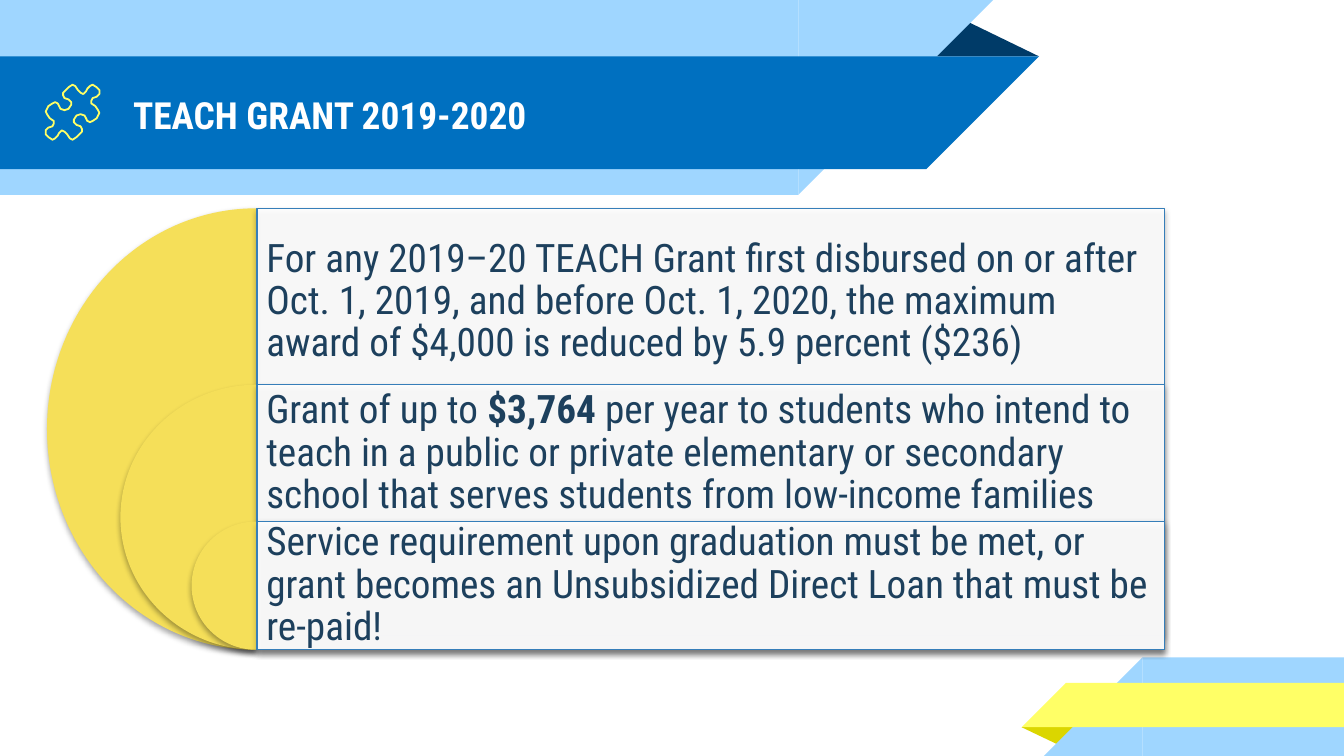
"""Build the TEACH Grant slide with ribbon bands and nested half circles."""
import lxml.etree
import pptx
import pptx.dml.color
import pptx.enum.shapes
import pptx.enum.text
import pptx.oxml.ns
import pptx.util

Pt = pptx.util.Pt
MSO = pptx.enum.shapes.MSO_SHAPE
ANCHOR = pptx.enum.text.MSO_ANCHOR
qn = pptx.oxml.ns.qn
FONT = "Roboto Condensed"
COLORS = {
    "navy": "003B68", "sky": "9FD6FF", "blue": "0070C0", "olive": "DBD600",
    "lemon": "FFFF66", "gold": "F5DF59", "white": "FFFFFF", "border": "367EB9",
    "text": "1D405D", "shadow": "000000",
}


def rgb(name):
    return pptx.dml.color.RGBColor.from_string(COLORS[name])


def add_filled(kind, box, color, shadow=False):
    sp = s.shapes.add_shape(kind, *[Pt(v) for v in box])
    sp.fill.solid()
    sp.fill.fore_color.rgb = rgb(color)
    sp.line.fill.background()
    sp.shadow.inherit = False
    if shadow:
        effects = sp._element.spPr.find(qn("a:effectLst"))
        outer = lxml.etree.SubElement(
            effects, qn("a:outerShdw"), blurRad=str(Pt(3.1)), dist=str(Pt(1.8)),
            dir="5400000", rotWithShape="0")
        clr = lxml.etree.SubElement(outer, qn("a:srgbClr"), val=COLORS["shadow"])
        lxml.etree.SubElement(clr, qn("a:alpha"), val="35000")
    return sp


prs = pptx.Presentation()
prs.slide_width, prs.slide_height = Pt(720), Pt(405)
s = prs.slides.add_slide(prs.slide_layouts[5])

bands = [
    (MSO.ISOSCELES_TRIANGLE, (495.4, 10.1, 61.2, 20.1), "navy", 0),
    (MSO.RECTANGLE, (0, 0, 427.7, 104.4), "sky", 0),
    (MSO.RIGHT_TRIANGLE, (427.7, 0, 104.4, 104.4), "sky", 90),
    (MSO.RECTANGLE, (0, 30.2, 496.1, 60.5), "blue", 0),
    (MSO.RIGHT_TRIANGLE, (496.1, 30.2, 60.5, 60.5), "blue", 90),
    (MSO.ISOSCELES_TRIANGLE, (547.3, 389.6, 31, 10), "olive", 180),
    (MSO.RECTANGLE, (612, 352.2, 108, 52.8), "sky", 0),
    (MSO.RIGHT_TRIANGLE, (559.2, 352.2, 52.8, 52.8), "sky", 270),
    (MSO.RECTANGLE, (571, 365.9, 149, 23.7), "lemon", 0),
    (MSO.RIGHT_TRIANGLE, (547.3, 365.9, 23.7, 23.7), "lemon", 270),
]
for kind, box, color, angle in bands:
    sp = add_filled(kind, box, color)
    sp.rotation = angle
    if kind == MSO.ISOSCELES_TRIANGLE:
        sp.adjustments[0] = 0.324

left, width, bottom = 137.7, 486, 348.1
rows = [
    (111.6, 224, 127.4, 68.4, [
        "For any 2019–20 TEACH Grant first disbursed on or after Oct. 1, 2019, "
        "and before Oct. 1, 2020, the maximum award of $4,000 is reduced by "
        "5.9 percent ($236)"]),
    (206.1, 145.4, 210.2, 65.5, [
        "Grant of up to ", "$3,764 ",
        "per year to students who intend to teach in a public or private "
        "elementary or secondary school that serves students from "
        "low-income families"]),
    (279.4, 69.2, 279.4, 68.4, [
        "Service requirement upon graduation must be met, or grant becomes an "
        "Unsubsidized Direct Loan that must be re-paid!"]),
]
for top, pie_width, text_top, text_height, texts in rows:
    height = bottom - top
    pie_height = 236.5 if top == rows[0][0] else height
    sp = add_filled(MSO.PIE, (left - 1.5 - pie_width / 2 + 1, top, pie_width, pie_height),
                    "gold", True)
    sp.adjustments[0], sp.adjustments[1] = 54, 162

    panel_height = 229 if top == rows[0][0] else height
    sp = add_filled(MSO.RECTANGLE, (left, top, width, panel_height), "white", True)
    clr = sp._element.spPr.find(qn("a:solidFill")).find(qn("a:srgbClr"))
    lxml.etree.SubElement(clr, qn("a:alpha"), val="90000")
    sp.line.color.rgb = rgb("border")
    sp.line.width = Pt(0.75)

    tf = s.shapes.add_textbox(Pt(left), Pt(text_top), Pt(width), Pt(text_height)).text_frame
    tf.word_wrap = True
    tf.vertical_anchor = ANCHOR.MIDDLE
    tf.margin_left = tf.margin_right = tf.margin_top = tf.margin_bottom = Pt(5)
    p = tf.paragraphs[0]
    p.line_spacing = 0.9
    for i, text in enumerate(texts):
        r = p.add_run()
        r.text = text
        r.font.name, r.font.size, r.font.bold = FONT, Pt(21), i == 1
        r.font.color.rgb = rgb("text")

title = s.shapes.title
title.left, title.top, title.width, title.height = Pt(64.1), Pt(31), Pt(443.5), Pt(60.5)
s.shapes._spTree.append(title._element)
tf = title.text_frame
tf.text = "TEACH GRANT 2019-2020"
tf.vertical_anchor = ANCHOR.MIDDLE
tf.margin_left = tf.margin_right = tf.margin_top = tf.margin_bottom = Pt(7.2)
p = tf.paragraphs[0]
p.alignment = pptx.enum.text.PP_ALIGN.LEFT
r = p.runs[0]
r.font.name, r.font.size, r.font.bold = FONT, Pt(20), True
r.font.color.rgb = rgb("white")

half = [
    (69, 73), (72, 72), (74, 70), (74, 67), (72, 65), (69, 63), (67, 64),
    (65, 66), (64, 68), (62, 70), (60, 69), (58, 67), (56, 64), (54, 63),
    (51, 65), (49, 67), (47, 69), (47, 71), (48, 73), (51, 74), (53, 76),
    (53, 78), (51, 81), (48, 82), (45, 81), (44, 79), (43, 77), (41, 76),
    (39, 77), (36, 79), (34, 83), (35, 85), (37, 88), (40, 90), (40, 92),
]
puzzle = half + [(108 - x, 167 - y) for x, y in half]
fb = s.shapes.build_freeform(*puzzle[0], scale=Pt(0.72))
fb.add_line_segments(puzzle[1:], close=True)
sp = fb.convert_to_shape()
sp.fill.background()
sp.line.color.rgb = rgb("lemon")
sp.line.width = Pt(0.96)
sp.shadow.inherit = False

prs.save("out.pptx")
